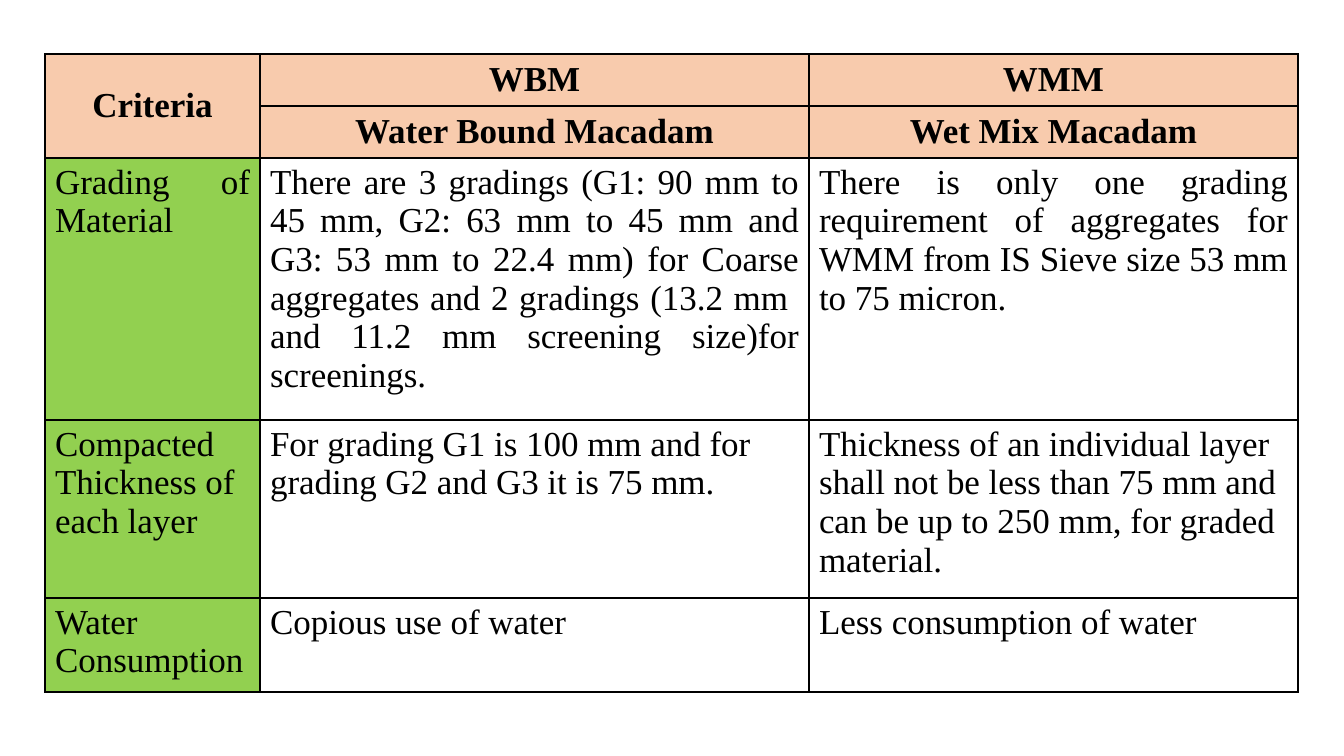
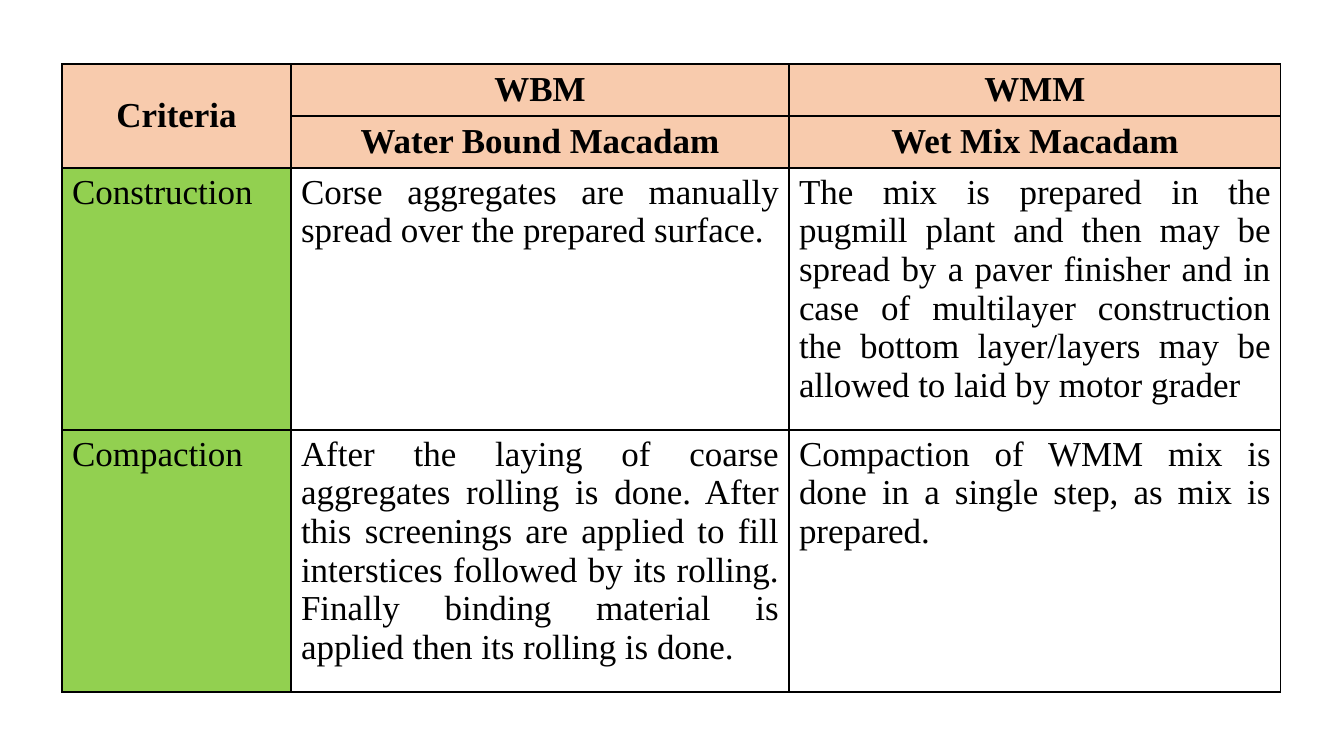
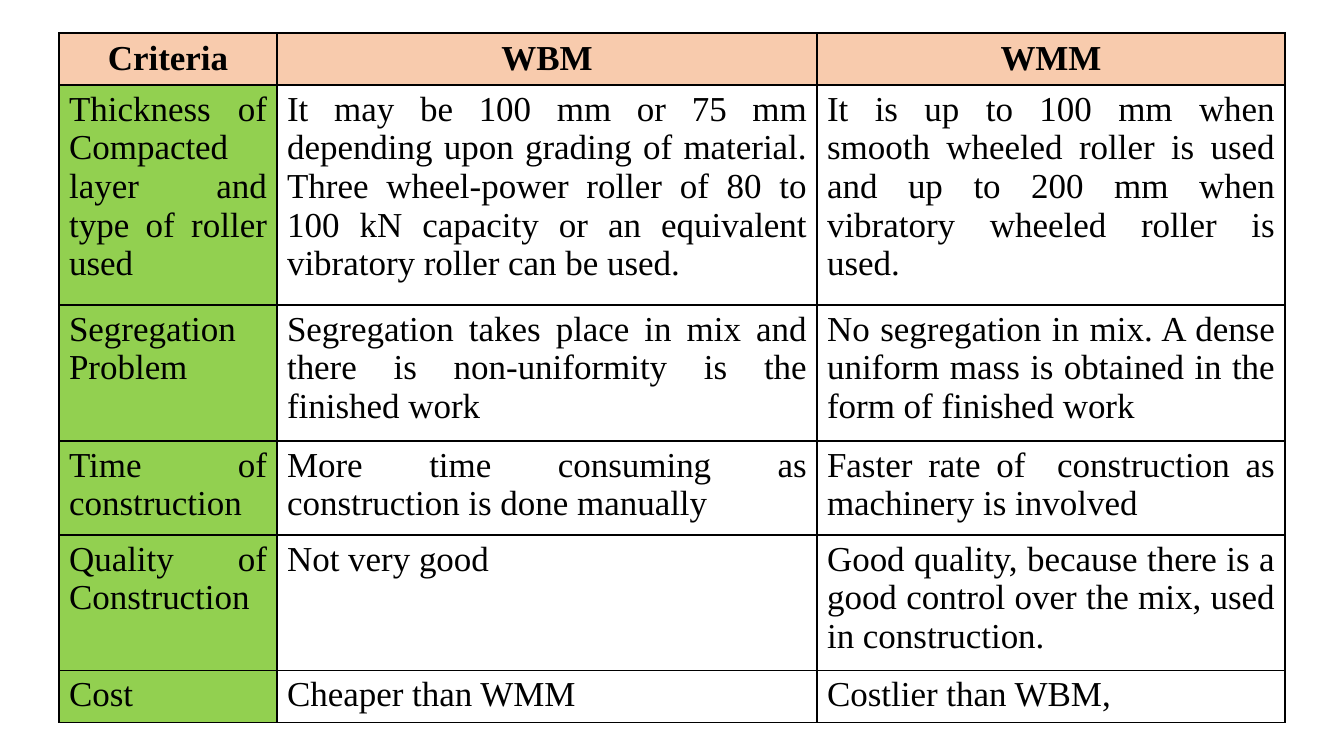
"""Builds three slides of tables comparing WBM with WMM road bases."""
from dataclasses import dataclass

from lxml.etree import SubElement
from pptx import Presentation
from pptx.dml.color import RGBColor
from pptx.enum.text import MSO_ANCHOR as Anchor, PP_ALIGN as Align
from pptx.oxml.ns import qn
from pptx.util import Emu, Pt

SLIDE_WIDTH, SLIDE_HEIGHT = 1344, 756
EMU_PER_PX = 12192000 / SLIDE_WIDTH
FONT = "Times New Roman"
FONT_SIZE = 25
BLACK, PEACH, GREEN = "000000", "F8CBAD", "92D050"
LINE_HEIGHT, ROW_PADDING = 42, 10
SHORT_HEADER = ("Criteria", "WBM", "WMM")
FULL_NAMES = ("", "Water Bound Macadam", "Wet Mix Macadam")


@dataclass(frozen=True)
class Row:
    texts: tuple[str, str, str]
    lines: int = 1
    align: Align = Align.JUSTIFY


@dataclass(frozen=True)
class Comparison:
    left: int
    top: int
    columns: tuple[int, int, int]
    headers: tuple[tuple[str, str, str], ...]
    rows: tuple[Row, ...]


COMPARISONS = (
    Comparison(45, 54, (215, 549, 489), (SHORT_HEADER, FULL_NAMES), (
        Row(("Grading of Material",
             "There are 3 gradings (G1: 90 mm to 45 mm, G2: 63 mm to 45 mm and "
             "G3: 53 mm to 22.4 mm) for Coarse aggregates and 2 gradings "
             "(13.2 mm  and 11.2 mm screening size)for screenings.",
             "There is only one grading requirement of aggregates for WMM from "
             "IS Sieve size 53 mm to 75 micron."), 6),
        Row(("Compacted Thickness of each layer",
             "For grading G1 is 100 mm and for grading G2 and G3 it is 75 mm.",
             "Thickness of an individual layer shall not be less than 75 mm and "
             "can be up to 250 mm, for graded material."), 4, Align.LEFT),
        Row(("Water Consumption", "Copious use of water",
             "Less consumption of water"), 2),
    )),
    Comparison(62, 64, (229, 498, 492), (SHORT_HEADER, FULL_NAMES), (
        Row(("Construction",
             "Corse aggregates are manually spread over the prepared surface.",
             "The mix is prepared in the pugmill plant and then may be spread by "
             "a paver finisher and in case of multilayer construction the bottom "
             "layer/layers may be allowed to laid by motor grader"), 6),
        Row(("Compaction",
             "After the laying of coarse aggregates rolling is done. After this "
             "screenings are applied to fill interstices followed by its rolling. "
             "Finally binding material is applied then its rolling is done.",
             "Compaction of WMM mix is done in a single step, as mix is "
             "prepared."), 6),
    )),
    Comparison(59, 33, (218, 540, 468), (SHORT_HEADER,), (
        Row(("Thickness of Compacted layer and type of roller used",
             "It may be 100 mm or 75 mm depending upon grading of material. Three "
             "wheel-power roller of 80 to 100 kN capacity or an equivalent "
             "vibratory roller can be used.",
             "It is up to 100 mm when smooth wheeled roller is used and up to "
             "200 mm when vibratory wheeled roller is used."), 5),
        Row(("Segregation Problem",
             "Segregation takes place in mix and there is non-uniformity is the "
             "finished work",
             "No segregation in mix. A dense uniform mass is obtained in the form "
             "of finished work"), 3),
        Row(("Time of construction",
             "More time consuming as construction is done manually",
             "Faster rate of  construction as machinery is involved"), 2),
        Row(("Quality of Construction", "Not very good",
             "Good quality, because there is a good control over the mix, used in "
             "construction."), 3),
        Row(("Cost", "Cheaper than WMM", "Costlier than WBM,")),
    )),
)


def px(length: int) -> Emu:
    return Emu(round(length * EMU_PER_PX))


def color(value: str) -> RGBColor:
    return RGBColor.from_string(value)


def write_text(cell, text: str, *, align: Align, bold: bool = False) -> None:
    paragraph = cell.text_frame.paragraphs[0]
    paragraph.alignment = align
    run = paragraph.add_run()
    run.text = text
    run.font.name = FONT
    run.font.size = Pt(FONT_SIZE)
    run.font.bold = bold
    run.font.color.rgb = color(BLACK)


def draw_borders(cell) -> None:
    properties = cell._tc.get_or_add_tcPr()
    for side in ("a:lnL", "a:lnR", "a:lnT", "a:lnB"):
        line = SubElement(properties, qn(side), w=str(Pt(1)))
        fill = SubElement(line, qn("a:solidFill"))
        SubElement(fill, qn("a:srgbClr"), val=BLACK)


def format_cell(cell, fill: str | None, anchor: Anchor) -> None:
    draw_borders(cell)
    cell.vertical_anchor = anchor
    if fill:
        cell.fill.solid()
        cell.fill.fore_color.rgb = color(fill)
    else:
        cell.fill.background()


def add_comparison(slide, comparison: Comparison) -> None:
    header_count = len(comparison.headers)
    rows = [Row(texts, align=Align.CENTER) for texts in comparison.headers]
    rows += comparison.rows
    heights = [ROW_PADDING + LINE_HEIGHT * row.lines for row in rows]
    table = slide.shapes.add_table(
        len(rows), len(comparison.columns), px(comparison.left), px(comparison.top),
        px(sum(comparison.columns)), px(sum(heights))).table
    table.first_row = table.horz_banding = False
    for column, width in zip(table.columns, comparison.columns):
        column.width = px(width)
    for row_index, (row, height) in enumerate(zip(rows, heights)):
        table.rows[row_index].height = px(height)
        is_header = row_index < header_count
        for column_index, text in enumerate(row.texts):
            cell = table.cell(row_index, column_index)
            fill = PEACH if is_header else GREEN if column_index == 0 else None
            format_cell(cell, fill, Anchor.MIDDLE if is_header else Anchor.TOP)
            if text:
                write_text(cell, text, align=row.align, bold=is_header)
    if header_count > 1:
        table.cell(0, 0).merge(table.cell(header_count - 1, 0))


def main() -> None:
    presentation = Presentation()
    presentation.slide_width = px(SLIDE_WIDTH)
    presentation.slide_height = px(SLIDE_HEIGHT)
    blank_layout = presentation.slide_layouts[6]
    for comparison in COMPARISONS:
        add_comparison(presentation.slides.add_slide(blank_layout), comparison)
    presentation.save("out.pptx")


if __name__ == "__main__":
    main()
